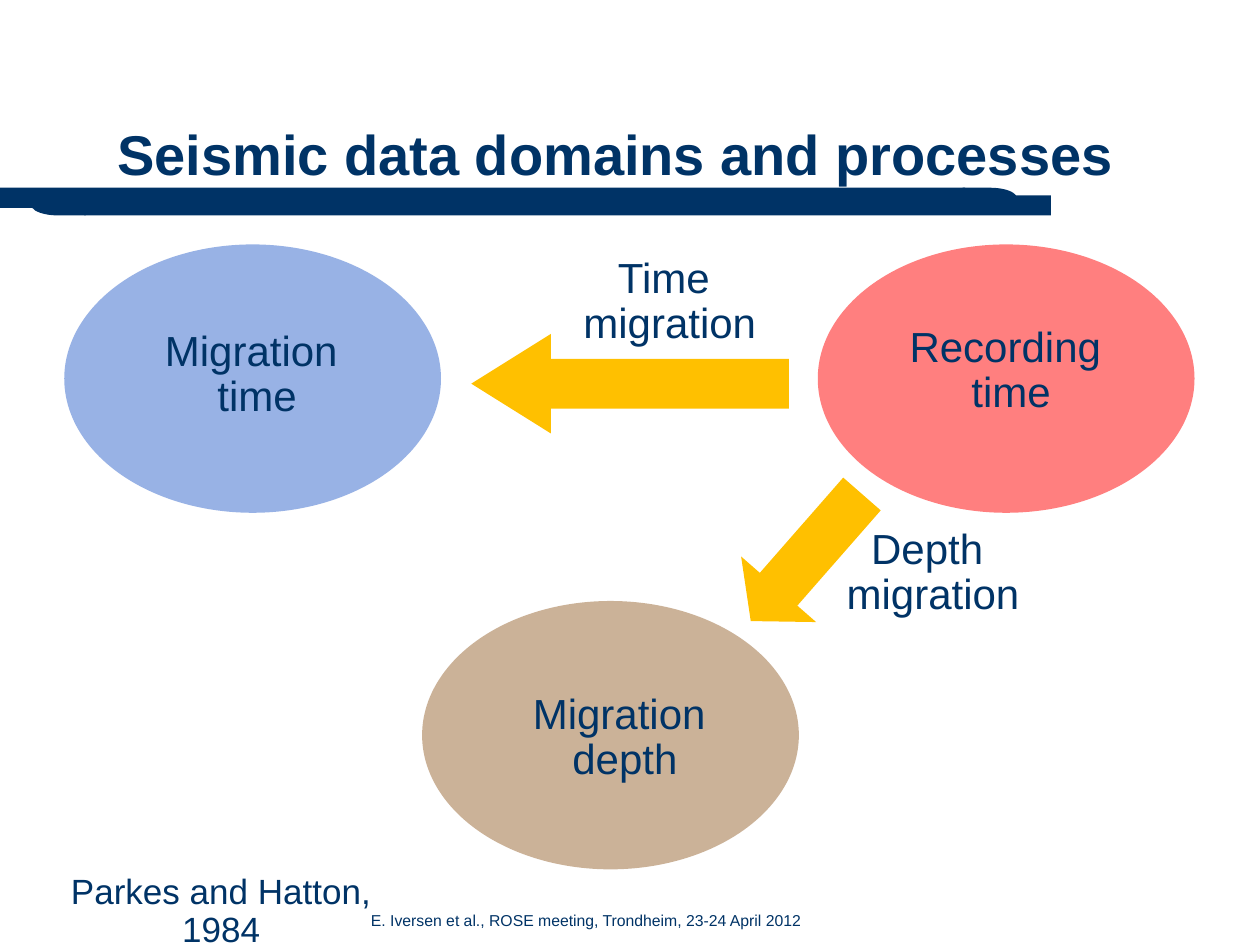
import pptx
import pptx.dml.color
import pptx.enum.shapes
import pptx.enum.text
import pptx.oxml.ns
import pptx.util
from lxml import etree
from pptx.util import Inches

NAVY = pptx.dml.color.RGBColor(0x00, 0x33, 0x66)
BLUE = pptx.dml.color.RGBColor(0x33, 0x66, 0xCC)
BROWN = pptx.dml.color.RGBColor(0x99, 0x66, 0x33)
RED = pptx.dml.color.RGBColor(0xFF, 0x00, 0x00)
AMBER = pptx.dml.color.RGBColor(0xFF, 0xC0, 0x00)
FONT = "Arial"
SHAPE = pptx.enum.shapes.MSO_SHAPE
ALIGN = pptx.enum.text.PP_ALIGN

TITLE = "Seismic data domains and processes"
BAR_SIZE = (7.67, 0.16)
CAP_SIZE = (0.43, 0.16)
# kind, left, top, size, rotation
RULE_PARTS = [
    (SHAPE.RECTANGLE, -0.01, 1.49, BAR_SIZE, 0),
    (SHAPE.FLOWCHART_DELAY, 7.64, 1.49, CAP_SIZE, 0),
    (SHAPE.RECTANGLE, 0.67, 1.55, BAR_SIZE, 0),
    (SHAPE.FLOWCHART_DELAY, 0.25, 1.55, CAP_SIZE, 180),
]
DOMAIN_SIZE = (2.99, 2.13)
# left, top, colour
DOMAINS = [(0.51, 1.94, BLUE), (3.35, 4.77, BROWN), (6.49, 1.94, RED)]
# left, top, width, height, rotation, head length
ARROWS = [
    (3.74, 2.65, 2.52, 0.79, 0, 0.8),
    (5.73, 4.03, 1.34, 0.79, 311.2, 0.425),
]
# lines, box, size in points, line spacing
LABELS = [
    (["Recording ", "time"], (7.11, 2.54, 1.83, 0.83), 24, 0.9),
    (["Migration ", "time"], (1.2, 2.57, 1.68, 0.83), 24, 0.9),
    (["Migration ", "depth"], (4.12, 5.45, 1.68, 0.83), 24, 0.9),
    (["Time ", "migration"], (4.37, 1.99, 1.89, 0.82), 24, 0.9),
    (["Depth ", "migration"], (6.42, 4.14, 1.97, 0.82), 24, 0.9),
    (["Parkes and Hatton, 1984"], (0.12, 6.89, 3.27, 0.4), 20, 0.9),
    (["E. Iversen et al., ROSE meeting, Trondheim, 23-24 April 2012"],
     (1.22, 7.18, 6.86, 0.19), 9, 1.0),
]


def add_filled_shape(slide, kind, box, color, rotation=0):
    shape = slide.shapes.add_shape(kind, *map(Inches, box))
    shape.shadow.inherit = False
    shape.fill.solid()
    shape.fill.fore_color.rgb = color
    shape.line.fill.background()
    shape.rotation = rotation
    return shape


def make_half_transparent(shape):
    color = shape.fill._xPr.find(".//" + pptx.oxml.ns.qn("a:srgbClr"))
    etree.SubElement(color, pptx.oxml.ns.qn("a:alpha"), val="50000")


def write_lines(frame, lines, size, spacing, alignment, bold=False):
    frame.word_wrap = True
    frame.auto_size = pptx.enum.text.MSO_AUTO_SIZE.NONE
    for index, line in enumerate(lines):
        paragraph = frame.add_paragraph() if index else frame.paragraphs[0]
        paragraph.alignment = alignment
        paragraph.line_spacing = spacing
        run = paragraph.add_run()
        run.text = line
        run.font.name = FONT
        run.font.size = pptx.util.Pt(size)
        run.font.bold = bold
        run.font.color.rgb = NAVY


def main():
    presentation = pptx.Presentation()
    presentation.slide_width = Inches(10)
    presentation.slide_height = Inches(7.5)
    slide = presentation.slides.add_slide(presentation.slide_layouts[5])

    for kind, left, top, size, rotation in RULE_PARTS:
        add_filled_shape(slide, kind, (left, top, *size), NAVY, rotation)

    for left, top, color in DOMAINS:
        domain = add_filled_shape(slide, SHAPE.OVAL, (left, top, *DOMAIN_SIZE), color)
        make_half_transparent(domain)

    title = slide.shapes.title
    title.left, title.top, title.width, title.height = map(
        Inches, (0.83, 0.83, 8.67, 0.71))
    title.text_frame.vertical_anchor = pptx.enum.text.MSO_ANCHOR.BOTTOM
    write_lines(title.text_frame, [TITLE], 32, 0.9, ALIGN.LEFT, bold=True)

    for lines, box, size, spacing in LABELS:
        label = slide.shapes.add_textbox(*map(Inches, box))
        write_lines(label.text_frame, lines, size, spacing, ALIGN.CENTER)

    for *box, rotation, head_length in ARROWS:
        arrow = add_filled_shape(slide, SHAPE.LEFT_ARROW, box, AMBER, rotation)
        arrow.adjustments[0] = 0.5
        arrow.adjustments[1] = head_length

    presentation.save("out.pptx")


if __name__ == "__main__":
    main()
